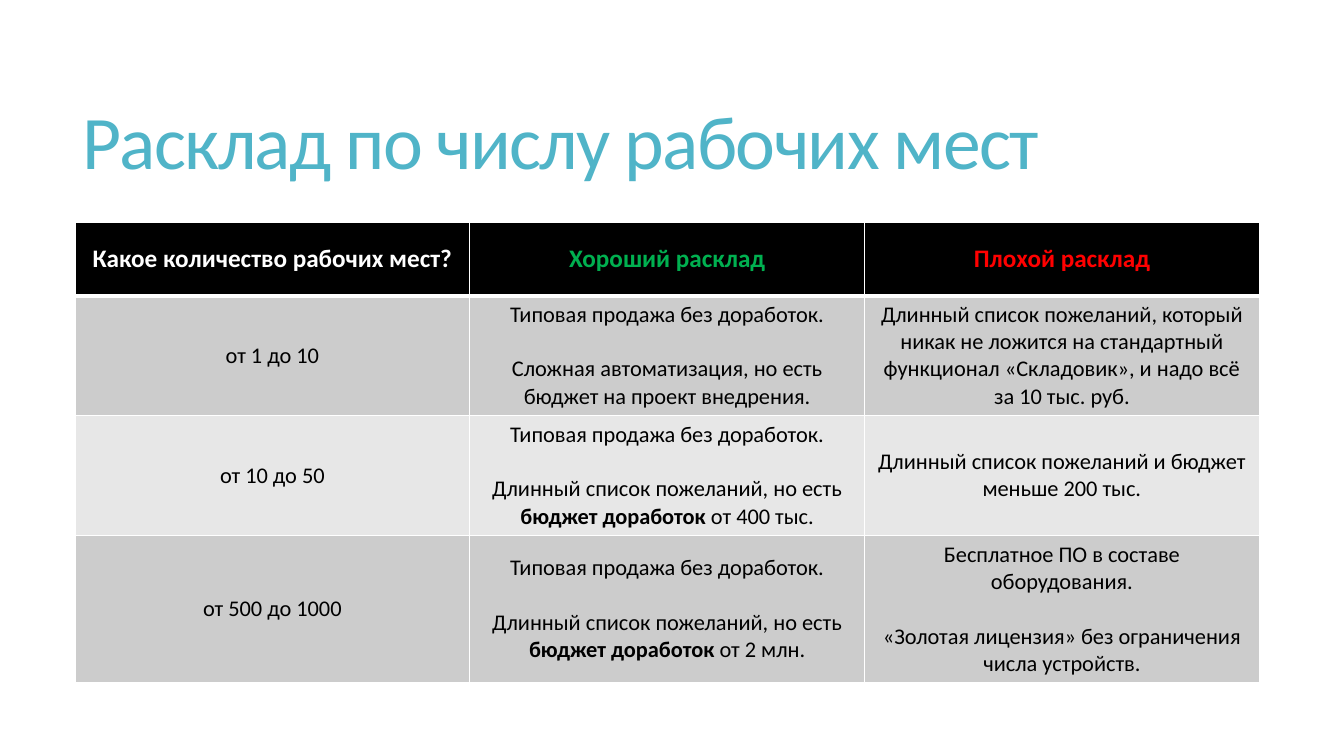
from dataclasses import dataclass

import lxml.etree
import pptx
import pptx.dml.color
import pptx.enum.text
import pptx.oxml.ns
import pptx.table
import pptx.text.text
import pptx.util
from pptx.util import Cm, Pt


@dataclass(frozen=True)
class Theme:
    font: str = "Calibri"
    title: str = "50B4C8"
    white: str = "FFFFFF"
    black: str = "000000"
    good: str = "00B050"
    bad: str = "FF0000"
    bands: tuple[str, str] = ("CCCCCC", "E7E7E7")
    title_size: float = 54
    header_size: float = 18
    body_size: float = 16
    paragraph_gap: float = 19.5
    thin_line: float = 1
    thick_line: float = 3


@dataclass(frozen=True)
class Column:
    heading: str
    color: str


@dataclass(frozen=True)
class Situation:
    """One body row; line breaks part paragraphs and ** encloses bold words."""
    seats: str
    good: str
    bad: str
    height: float


THEME = Theme()
TABLE_LEFT, TABLE_TOP, COLUMN_WIDTH, HEADER_HEIGHT = 1.89, 5.6, 9.95, 1.85

COLUMNS = [
    Column("Какое количество рабочих мест?", THEME.white),
    Column("Хороший расклад", THEME.good),
    Column("Плохой расклад", THEME.bad),
]
SITUATIONS = [
    Situation(
        "от 1 до 10",
        "Типовая продажа без доработок.\n"
        "Сложная автоматизация, но есть бюджет на проект внедрения.",
        "Длинный список пожеланий, который никак не ложится на стандартный "
        "функционал «Складовик», и надо всё за 10 тыс. руб.",
        3.02,
    ),
    Situation(
        "от 10 до 50",
        "Типовая продажа без доработок.\n"
        "Длинный список пожеланий, но есть **бюджет доработок** от 400 тыс.",
        "Длинный список пожеланий и бюджет меньше 200 тыс.",
        3.02,
    ),
    Situation(
        "от 500 до 1000",
        "Типовая продажа без доработок.\n"
        "Длинный список пожеланий, но есть **бюджет доработок** от 2 млн.",
        "Бесплатное ПО в составе оборудования.\n"
        "«Золотая лицензия» без ограничения числа устройств.",
        3.72,
    ),
]


def write_text(
    frame: pptx.text.text.TextFrame,
    text: str,
    *,
    size: float,
    color: str,
    bold: bool = False,
    alignment: pptx.enum.text.PP_ALIGN = pptx.enum.text.PP_ALIGN.LEFT,
    line_spacing: float = 1.0,
    character_spacing: float = 0,
) -> None:
    """Fill a frame with paragraphs, toggling bold at each ** mark."""
    frame.word_wrap = True
    for index, line in enumerate(text.split("\n")):
        paragraph = frame.add_paragraph() if index else frame.paragraphs[0]
        paragraph.alignment = alignment
        paragraph.line_spacing = line_spacing
        paragraph.space_before = Pt(THEME.paragraph_gap if index else 0)
        for part_index, part in enumerate(line.split("**")):
            run = paragraph.add_run()
            run.text = part
            run.font.name = THEME.font
            run.font.size = Pt(size)
            run.font.bold = bold or part_index % 2 == 1
            run.font.color.rgb = pptx.dml.color.RGBColor.from_string(color)
            if character_spacing:
                run.font._element.set("spc", str(round(character_spacing * 100)))


def set_borders(cell: pptx.table._Cell, top: float, bottom: float) -> None:
    properties = cell._tc.get_or_add_tcPr()
    widths = {"lnL": THEME.thin_line, "lnR": THEME.thin_line, "lnT": top, "lnB": bottom}
    for index, (side, width) in enumerate(widths.items()):
        line = lxml.etree.Element(pptx.oxml.ns.qn(f"a:{side}"), w=str(int(Pt(width))))
        fill = lxml.etree.SubElement(line, pptx.oxml.ns.qn("a:solidFill"))
        lxml.etree.SubElement(fill, pptx.oxml.ns.qn("a:srgbClr"), val=THEME.white)
        properties.insert(index, line)


def fill_cell(
    cell: pptx.table._Cell, text: str, background: str, *,
    size: float, color: str, bold: bool = False,
    top: float = THEME.thin_line, bottom: float = THEME.thin_line,
) -> None:
    cell.fill.solid()
    cell.fill.fore_color.rgb = pptx.dml.color.RGBColor.from_string(background)
    cell.vertical_anchor = pptx.enum.text.MSO_ANCHOR.MIDDLE
    set_borders(cell, top, bottom)
    write_text(cell.text_frame, text, size=size, color=color, bold=bold,
               alignment=pptx.enum.text.PP_ALIGN.CENTER)


def main() -> None:
    presentation = pptx.Presentation()
    presentation.slide_width, presentation.slide_height = Cm(33.87), Cm(19.05)
    slide = presentation.slides.add_slide(presentation.slide_layouts[6])

    title = slide.shapes.add_textbox(Cm(1.83), Cm(1.4), Cm(29.92), Cm(4.6))
    title.text_frame.vertical_anchor = pptx.enum.text.MSO_ANCHOR.MIDDLE
    write_text(title.text_frame, "Расклад по числу рабочих мест", size=THEME.title_size,
               color=THEME.title, line_spacing=0.85, character_spacing=-1.2)

    heights = [HEADER_HEIGHT] + [situation.height for situation in SITUATIONS]
    table = slide.shapes.add_table(
        len(heights), len(COLUMNS), Cm(TABLE_LEFT), Cm(TABLE_TOP),
        Cm(COLUMN_WIDTH * len(COLUMNS)), Cm(sum(heights)),
    ).table
    table.horz_banding = False
    for row, height in zip(table.rows, heights):
        row.height = Cm(height)

    for column_index, column in enumerate(COLUMNS):
        table.columns[column_index].width = Cm(COLUMN_WIDTH)
        fill_cell(table.cell(0, column_index), column.heading, THEME.black,
                  size=THEME.header_size, color=column.color, bold=True,
                  bottom=THEME.thick_line)

    for row_index, situation in enumerate(SITUATIONS):
        background = THEME.bands[row_index % 2]
        top = THEME.thin_line if row_index else THEME.thick_line
        for column_index, text in enumerate((situation.seats, situation.good, situation.bad)):
            fill_cell(table.cell(row_index + 1, column_index), text, background,
                      size=THEME.body_size, color=THEME.black, top=top)

    presentation.save("out.pptx")


if __name__ == "__main__":
    main()
